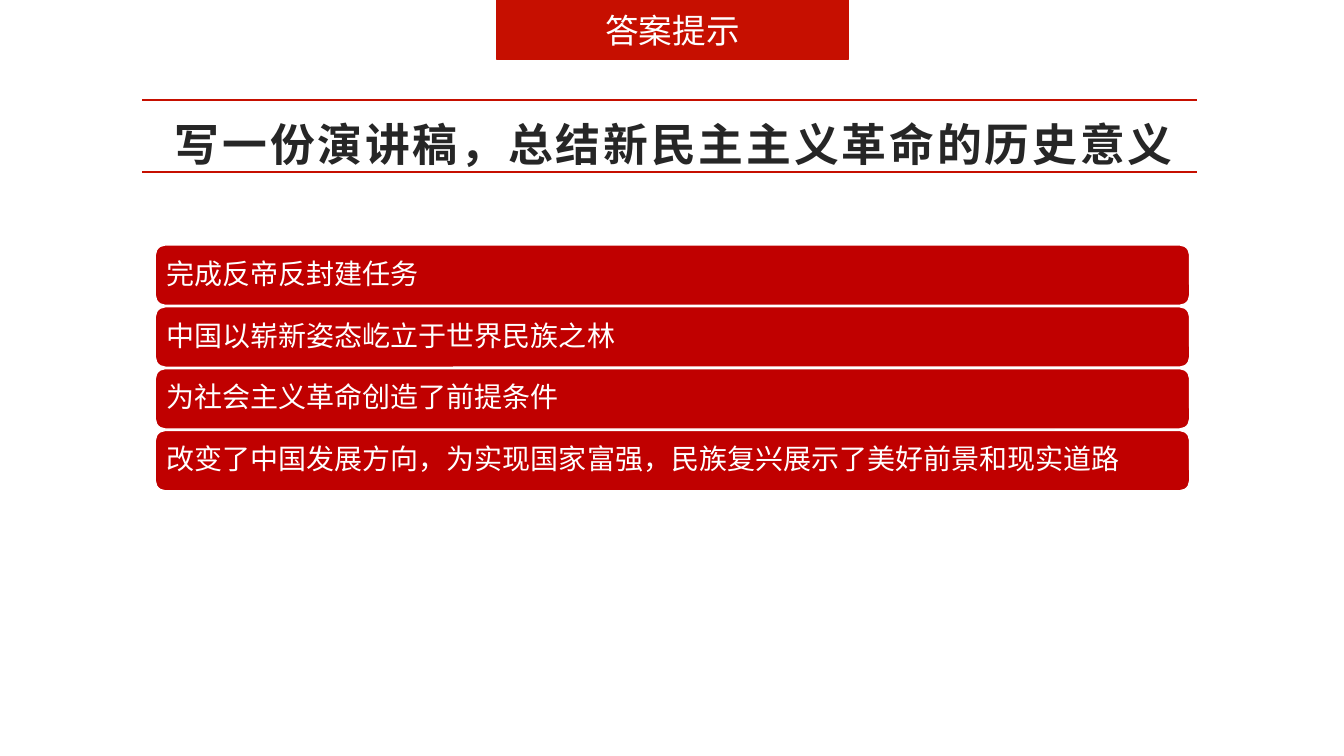
from dataclasses import dataclass

from lxml import etree
from pptx import Presentation
from pptx.dml.color import RGBColor
from pptx.enum.shapes import MSO_CONNECTOR, MSO_SHAPE
from pptx.enum.text import MSO_ANCHOR, PP_ALIGN
from pptx.oxml.ns import qn
from pptx.slide import Slide
from pptx.text.text import _Paragraph
from pptx.util import Inches, Pt

RECT, ROUNDED = MSO_SHAPE.RECTANGLE, MSO_SHAPE.ROUNDED_RECTANGLE
STRAIGHT = MSO_CONNECTOR.STRAIGHT
TOP, MIDDLE = MSO_ANCHOR.TOP, MSO_ANCHOR.MIDDLE
LEFT, CENTER = PP_ALIGN.LEFT, PP_ALIGN.CENTER

WHITE = RGBColor(0xFF, 0xFF, 0xFF)
DARK = RGBColor(0x26, 0x26, 0x26)
BAR_RED = RGBColor(0xC0, 0x00, 0x00)
ACCENT_RED = RGBColor(0xC6, 0x0F, 0x00)

TITLE = "写一份演讲稿，总结新民主主义革命的历史意义"
ANSWERS = (
    "完成反帝反封建任务",
    "中国以崭新姿态屹立于世界民族之林",
    "为社会主义革命创造了前提条件",
    "改变了中国发展方向，为实现国家富强，民族复兴展示了美好前景和现实道路",
)
FIRST_BAR_TOP, LAST_BAR_TOP = 2.43, 4.27
RULE_TOPS = (0.99, 1.71)


@dataclass(frozen=True)
class Box:
    text: str
    left: float
    top: float
    width: float
    height: float
    kind: MSO_SHAPE
    fill: RGBColor
    line: RGBColor
    size: int
    align: PP_ALIGN
    spacing: float = 1.0


def format_paragraph(p: _Paragraph, size: int, color: RGBColor,
                     align: PP_ALIGN, spacing: float) -> None:
    p.alignment = align
    p.line_spacing = spacing
    p.font.name = "Arial"
    p.font.size = Pt(size)
    p.font.color.rgb = color


def add_title(slide: Slide) -> None:
    sp = slide.shapes.title
    sp.left, sp.top = Inches(0.92), Inches(0.98)
    sp.width, sp.height = Inches(11.5), Inches(1.45)
    tf = sp.text_frame
    tf.text = TITLE
    tf.word_wrap = True
    tf.vertical_anchor = TOP
    tf.margin_left, tf.margin_right = Inches(0.11), Inches(0.08)
    tf.margin_top = tf.margin_bottom = Inches(0.04)
    p = tf.paragraphs[0]
    format_paragraph(p, 32, DARK, CENTER, 1.25)
    p.font.bold = True
    p.runs[0].font._element.set("spc", "200")


def add_box(slide: Slide, box: Box) -> None:
    sp = slide.shapes.add_shape(box.kind, Inches(box.left), Inches(box.top),
                                Inches(box.width), Inches(box.height))
    sp.shadow.inherit = False
    sp.fill.solid()
    sp.fill.fore_color.rgb = box.fill
    sp.line.color.rgb = box.line
    sp.line.width = Pt(1)
    tf = sp.text_frame
    tf.text = box.text
    tf.word_wrap = True
    tf.vertical_anchor = MIDDLE
    tf.margin_left = tf.margin_right = Inches(0.08)
    tf.margin_top = tf.margin_bottom = Inches(0.05)
    format_paragraph(tf.paragraphs[0], box.size, WHITE, box.align, box.spacing)


def add_rule(slide: Slide, top: float) -> None:
    rule = slide.shapes.add_connector(STRAIGHT, Inches(11.87), Inches(top),
                                      Inches(1.41), Inches(top))
    rule.line.color.rgb = ACCENT_RED
    rule.line.width = Pt(1.5)
    etree.SubElement(rule._element.spPr, qn("a:effectLst"))


def main() -> None:
    prs = Presentation()
    prs.slide_width, prs.slide_height = Inches(13.33), Inches(7.5)
    slide = prs.slides.add_slide(prs.slide_layouts[5])
    add_title(slide)
    pitch = (LAST_BAR_TOP - FIRST_BAR_TOP) / (len(ANSWERS) - 1)
    for i, answer in enumerate(ANSWERS):
        add_box(slide, Box(answer, 1.54, FIRST_BAR_TOP + i * pitch, 10.26, 0.6,
                           ROUNDED, BAR_RED, WHITE, 20, LEFT, 0.9))
    add_box(slide, Box("答案提示", 4.93, 0, 3.48, 0.59,
                       RECT, ACCENT_RED, ACCENT_RED, 24, CENTER))
    for top in RULE_TOPS:
        add_rule(slide, top)
    prs.save("out.pptx")


if __name__ == "__main__":
    main()
